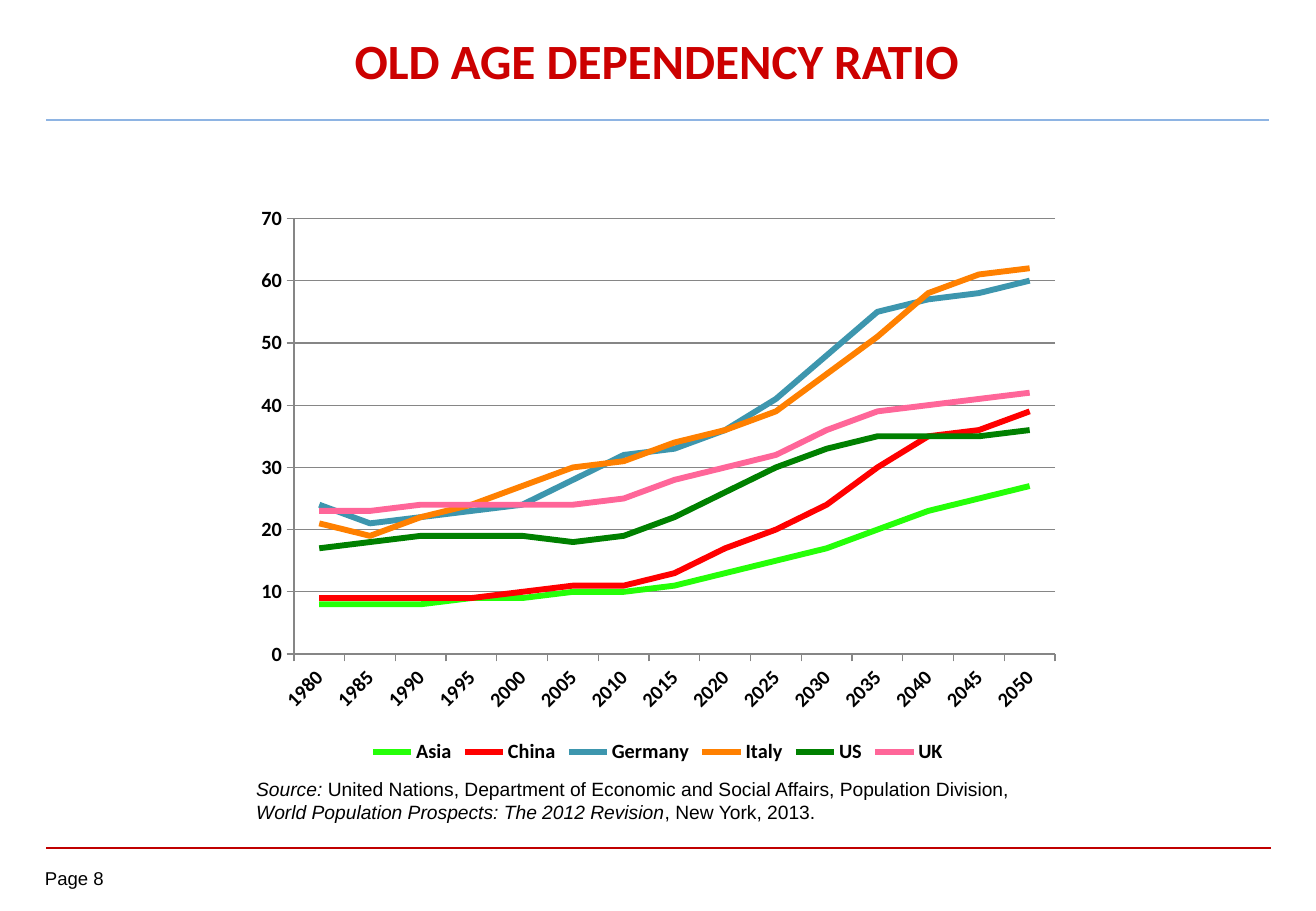
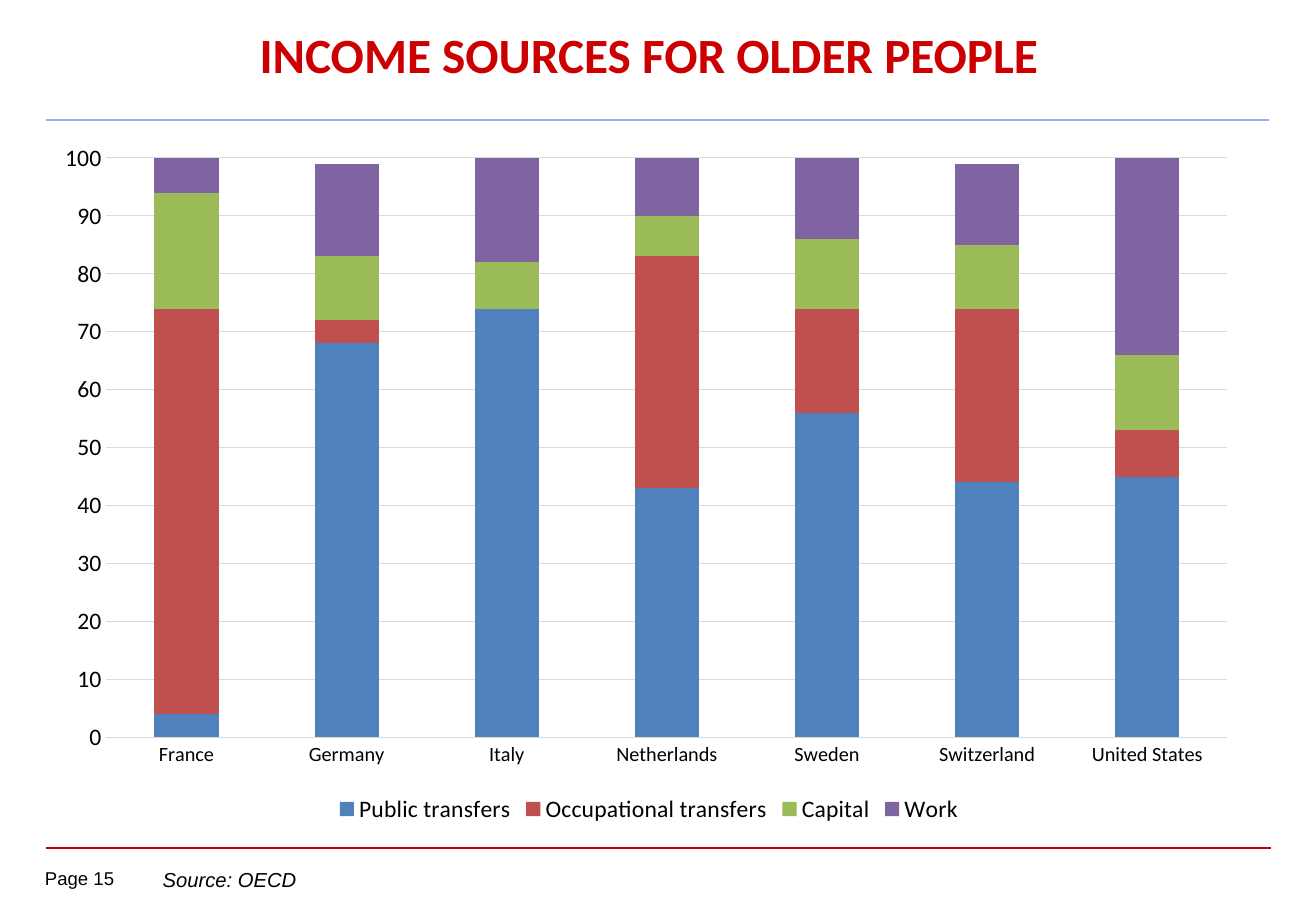
from lxml import etree
from pptx import Presentation, util as u
from pptx.chart.data import CategoryChartData
from pptx.dml.color import RGBColor
from pptx.enum import chart as ch, shapes, text
from pptx.oxml import parse_xml
from pptx.oxml.ns import nsdecls, qn

PX = 9144  # 100 px to the inch
BLACK, TITLE_RED, RULE_RED, RULE_BLUE = "000000", "CC0000", "C00000", "8EB4E3"
AXIS_GREY, GRID_GREY = "868686", "D9D9D9"


def px(*lengths):
    return [u.Emu(length * PX) for length in lengths]


def rgb(code):
    return RGBColor.from_string(code)


def style_font(font, size, color=BLACK, face="Arial", bold=False, italic=False):
    font.name, font.size, font.bold, font.italic = face, u.Pt(size), bold, italic
    font.color.rgb = rgb(color)


def style_line(line, color, width=0.75):
    line.color.rgb = rgb(color)
    line.width = u.Pt(width)


class Pages:
    """Holds the deck, its shared style and the page being built."""

    def __init__(self):
        self.deck = Presentation()
        self.deck.slide_width, self.deck.slide_height = px(1083, 750)

    def start(self, title, title_at, number):
        self.page = self.deck.slides.add_slide(self.deck.slide_layouts[5])
        self.rule(38, 1046, 698, RULE_RED, 1)
        self.rule(38, 1044, 99, RULE_BLUE, 1.5)
        self.text([(f"Page {number}", False)], (37, 714, 73, 22), 11, inset=0)
        box = self.page.shapes.title
        box.left, box.top, box.width, box.height = px(*title_at)
        frame = box.text_frame
        frame.text = title
        frame.vertical_anchor = text.MSO_ANCHOR.MIDDLE
        frame.auto_size = text.MSO_AUTO_SIZE.NONE
        para = frame.paragraphs[0]
        para.alignment = text.PP_ALIGN.CENTER
        style_font(para.runs[0].font, 29.2, TITLE_RED, "Calibri", bold=True)

    def rule(self, left, right, top, color, width):
        line = self.page.shapes.add_connector(
            shapes.MSO_CONNECTOR.STRAIGHT, *px(left, top, right, top))
        style_line(line.line, color, width)
        etree.SubElement(line.element.spPr, qn("a:effectLst"))

    def text(self, spans, at, size, inset=None):
        """Adds a text box of (words, italic) spans."""
        frame = self.page.shapes.add_textbox(*px(*at)).text_frame
        frame.word_wrap = True
        if inset is not None:
            frame.margin_left = frame.margin_right = inset
            frame.margin_top = frame.margin_bottom = inset
        for words, italic in spans:
            span = frame.paragraphs[0].add_run()
            span.text = words
            style_font(span.font, size, italic=italic)

    def chart(self, kind, at, plot_at, categories, series, top, bold=False,
              value_size=12, tick=ch.XL_TICK_MARK.NONE, grid=GRID_GREY):
        """Adds a chart; plot_at gives the plot area as shares of the chart."""
        data = CategoryChartData(number_format="General")
        data.categories = categories
        for name, _, values in series:
            data.add_series(name, values)
        chart = self.page.shapes.add_chart(kind, *px(*at), data).chart
        chart.has_title = False
        style_font(chart.font, 12, face="Calibri", bold=bold)
        chart.has_legend = True
        chart.legend.position = ch.XL_LEGEND_POSITION.BOTTOM
        chart.legend.include_in_layout = False
        style_font(chart.legend.font, value_size, face="Calibri", bold=bold)

        values, names = chart.value_axis, chart.category_axis
        values.minimum_scale, values.maximum_scale = 0, top
        values.major_unit = 10
        values.has_major_gridlines = True
        style_line(values.major_gridlines.format.line, grid)
        style_line(names.format.line, grid)
        for axis, size in ((values, value_size), (names, 12)):
            axis.major_tick_mark = tick
            axis.minor_tick_mark = ch.XL_TICK_MARK.NONE
            style_font(axis.tick_labels.font, size, face="Calibri", bold=bold)

        plot = chart.plots[0]
        plot.vary_by_categories = False
        self.place_plot(chart, plot_at)
        return chart

    def place_plot(self, chart, plot_at):
        area = chart.element.find(".//" + qn("c:plotArea"))
        for layout in area.findall(qn("c:layout")):
            area.remove(layout)
        sizes = "".join(f'<c:{side} val="{share}"/>'
                        for side, share in zip("xywh", plot_at))
        area.insert(0, parse_xml(
            f'<c:layout {nsdecls("c")}><c:manualLayout>'
            '<c:layoutTarget val="inner"/><c:xMode val="edge"/>'
            f'<c:yMode val="edge"/>{sizes}</c:manualLayout></c:layout>'))

    def line_chart(self, at, plot_at, categories, series, top):
        chart = self.chart(ch.XL_CHART_TYPE.LINE, at, plot_at, categories, series,
                           top, True, 12, ch.XL_TICK_MARK.OUTSIDE, AXIS_GREY)
        style_line(chart.value_axis.format.line, AXIS_GREY)
        labels = chart.element.find(".//" + qn("c:catAx")).find(".//" + qn("a:bodyPr"))
        labels.set("rot", "-2700000")
        for line, (_, color, _) in zip(chart.plots[0].series, series):
            line.smooth = False
            line.marker.style = ch.XL_MARKER_STYLE.NONE
            style_line(line.format.line, color, 3.5)

    def stacked_chart(self, at, plot_at, categories, series, top):
        chart = self.chart(ch.XL_CHART_TYPE.COLUMN_STACKED, at, plot_at, categories,
                           series, top, value_size=14)
        chart.value_axis.format.line.fill.background()
        plot = chart.plots[0]
        plot.gap_width, plot.overlap = 150, 100
        for column, (_, color, _) in zip(plot.series, series):
            column.format.fill.solid()
            column.format.fill.fore_color.rgb = rgb(color)


def dependency_page(pages):
    pages.start("OLD AGE DEPENDENCY RATIO", (175, -2, 731, 102), 8)
    pages.line_chart(
        (201, 161, 681, 472), (0.06, 0.04, 0.92, 0.76),
        [str(year) for year in range(1980, 2051, 5)],
        [("Asia", "25FF08", (8, 8, 8, 9, 9, 10, 10, 11, 13, 15, 17, 20, 23, 25, 27)),
         ("China", "FF0000", (9, 9, 9, 9, 10, 11, 11, 13, 17, 20, 24, 30, 35, 36, 39)),
         ("Germany", "3D96AE",
          (24, 21, 22, 23, 24, 28, 32, 33, 36, 41, 48, 55, 57, 58, 60)),
         ("Italy", "FF8000",
          (21, 19, 22, 24, 27, 30, 31, 34, 36, 39, 45, 51, 58, 61, 62)),
         ("US", "008000", (17, 18, 19, 19, 19, 18, 19, 22, 26, 30, 33, 35, 35, 35, 36)),
         ("UK", "FF6699", (23, 23, 24, 24, 24, 24, 25, 28, 30, 32, 36, 39, 40, 41, 42))],
        70)
    pages.text(
        [("Source: ", True),
         ("United Nations, Department of Economic and Social Affairs, "
          "Population Division, ", False),
         ("World Population Prospects: The 2012 Revision", True),
         (", New York, 2013.", False)],
        (201, 635, 681, 48), 11.4)


def income_page(pages):
    pages.start("INCOME SOURCES FOR OLDER PEOPLE", (38, 9, 992, 71), 15)
    pages.stacked_chart(
        (38, 107, 992, 575), (0.05, 0.04, 0.93, 0.83),
        ["France", "Germany", "Italy", "Netherlands", "Sweden", "Switzerland",
         "United States"],
        [("Public transfers", "4F81BD", (4, 68, 74, 43, 56, 44, 45)),
         ("Occupational transfers", "C0504D", (70, 4, 0, 40, 18, 30, 8)),
         ("Capital", "9BBB59", (20, 11, 8, 7, 12, 11, 13)),
         ("Work", "8064A2", (6, 16, 19, 10, 14, 14, 35))],
        100)
    pages.text([("Source: OECD", True)], (124, 709, 835, 30), 12)


def main():
    pages = Pages()
    dependency_page(pages)
    income_page(pages)
    pages.deck.save("out.pptx")


if __name__ == "__main__":
    main()
